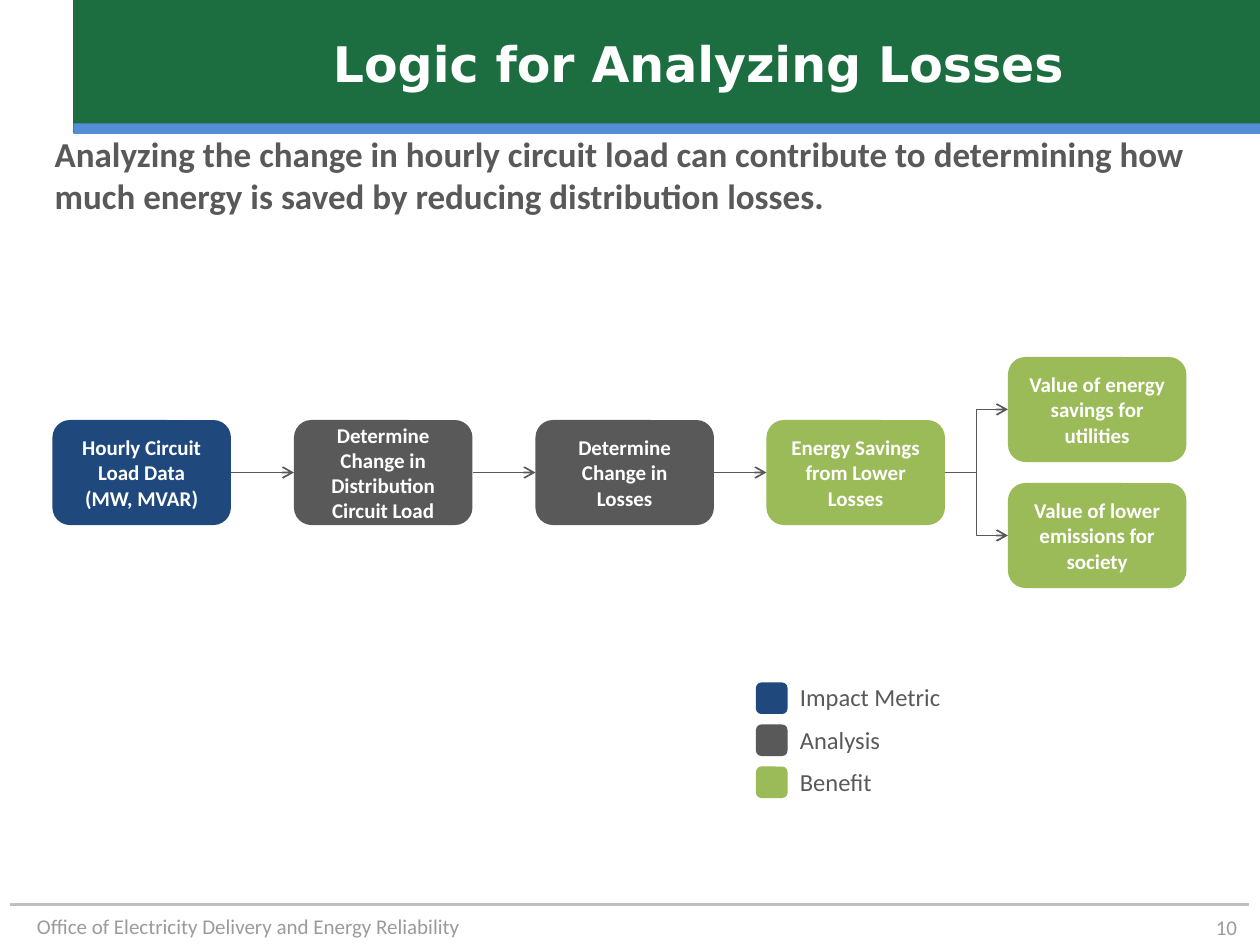
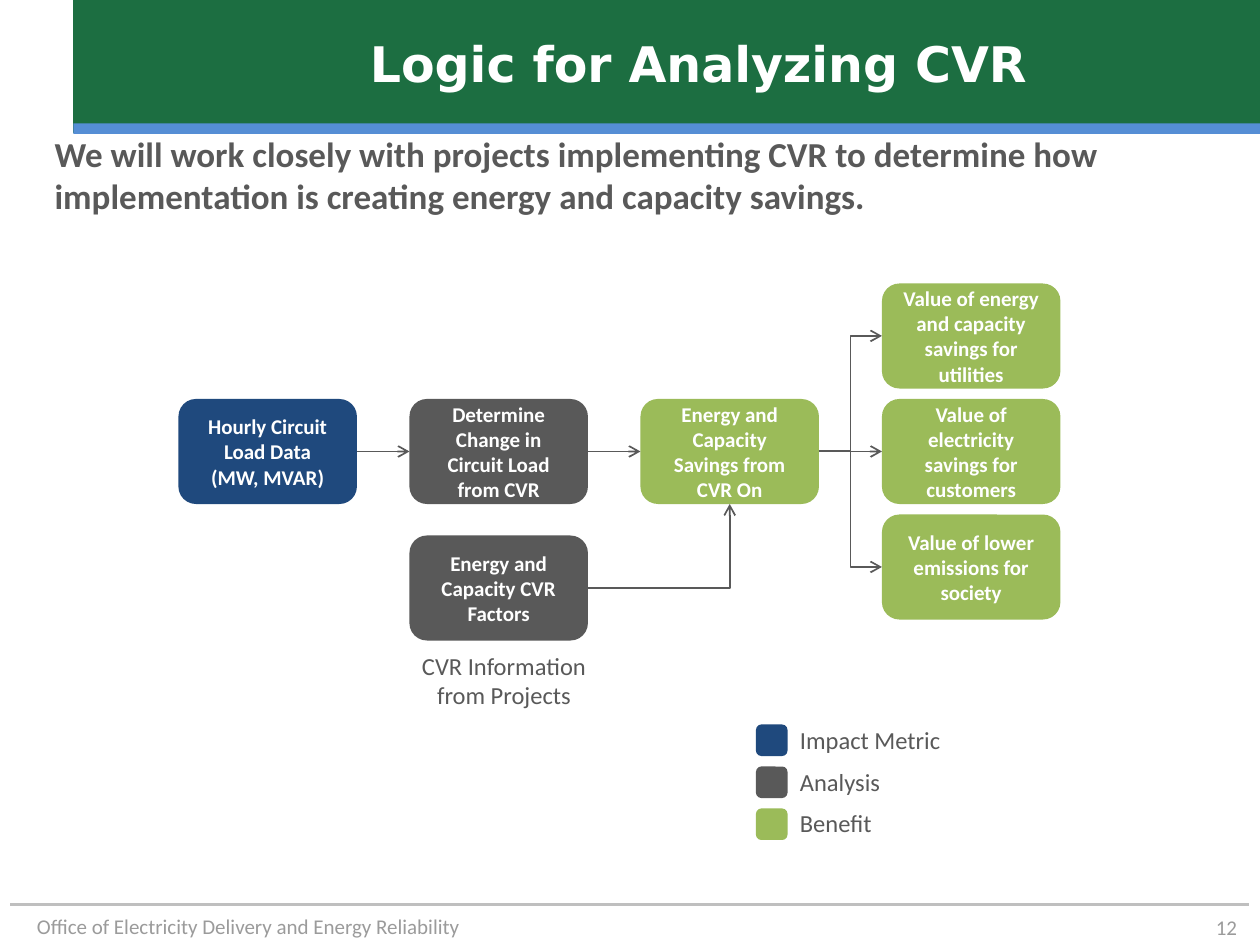
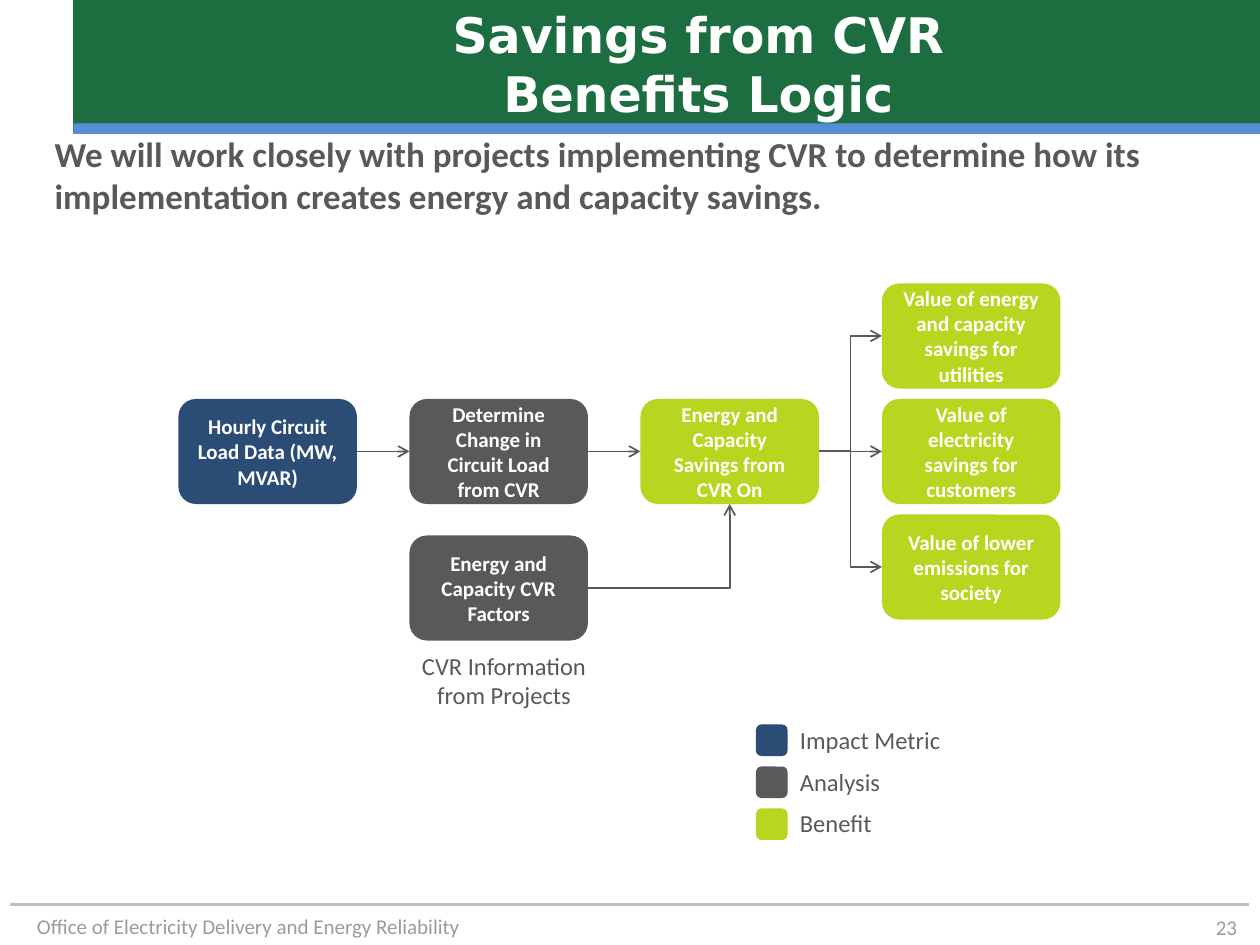
from dataclasses import dataclass

from lxml.etree import SubElement
from pptx import Presentation
from pptx.dml.color import RGBColor
from pptx.enum.shapes import MSO_CONNECTOR, MSO_SHAPE
from pptx.enum.text import MSO_ANCHOR, MSO_AUTO_SIZE, PP_ALIGN
from pptx.oxml.ns import qn
from pptx.util import Inches, Pt

COLS, ROWS = 120, 90
WIDTH, HEIGHT = Inches(10), Inches(7.5)
BOX_W, BOX_H = 17, 10
LEGEND_COL, LEGEND_STEP, SWATCH = 72, 4, 3

COLORS = {
    "band": "1C6E41", "stripe": "558ED5", "rule": "BFBFBF", "footer": "9B9B9B",
    "text": "595959", "white": "FFFFFF",
}
CLASSIC = {"Impact Metric": "1F497D", "Analysis": "595959", "Benefit": "9BBB59"}
VIVID = {"Impact Metric": "2B4C74", "Analysis": "595959", "Benefit": "B8D51F"}

TITLE = {"name": "DejaVu Sans", "size": Pt(28), "bold": True, "color": "white"}
LEAD = {"name": "Calibri", "size": Pt(20), "bold": True, "color": "text"}
BOX = {"name": "Calibri", "size": Pt(12), "bold": True, "color": "white"}
LABEL = {"name": "Calibri", "size": Pt(14), "bold": False, "color": "text"}
FOOTER = {"name": "Calibri", "size": Pt(12), "bold": False, "color": "footer"}

FLUSH = {"margin_top": 0, "margin_bottom": 0}
PADDED = {"margin_top": Inches(0.1), "margin_bottom": Inches(0.1),
          "vertical_anchor": MSO_ANCHOR.MIDDLE}


@dataclass
class Area:
    col: float
    row: float
    cols: float
    rows: float

    def emu(self) -> tuple:
        return (x(self.col), y(self.row), x(self.cols), y(self.rows))


@dataclass
class Node:
    text: str
    kind: str
    col: float
    row: float

    @property
    def area(self) -> Area:
        return Area(self.col, self.row, BOX_W, BOX_H)


@dataclass
class Link:
    start: str
    end: str
    from_below: bool = False


@dataclass
class Diagram:
    number: int
    title: str
    lead: str
    palette: dict
    nodes: dict
    links: list
    legend_row: float
    caption: str = ""


def x(col: float) -> int:
    return round(WIDTH * col / COLS)


def y(row: float) -> int:
    return round(HEIGHT * row / ROWS)


def rgb(value: str) -> RGBColor:
    return RGBColor.from_string(value)


def write(tf, text: str, fmt: dict, align=PP_ALIGN.LEFT, **frame) -> None:
    frame = {"word_wrap": True, "auto_size": MSO_AUTO_SIZE.NONE, **frame}
    for name, value in frame.items():
        setattr(tf, name, value)
    for i, line in enumerate(text.split("\n")):
        p = tf.add_paragraph() if i else tf.paragraphs[0]
        p.text = line
        p.alignment = align
        p.space_before = Pt(0)
        for r in p.runs:
            for name, value in fmt.items():
                if name == "color":
                    r.font.color.rgb = rgb(COLORS[value])
                else:
                    setattr(r.font, name, value)


def add_text(s, area: Area, text: str, fmt: dict, align=PP_ALIGN.LEFT, **frame):
    sp = s.shapes.add_textbox(*area.emu())
    write(sp.text_frame, text, fmt, align, **frame)
    return sp


def add_block(s, area: Area, color: str, preset=MSO_SHAPE.ROUNDED_RECTANGLE):
    sp = s.shapes.add_shape(preset, *area.emu())
    sp.shadow.inherit = False
    sp.fill.solid()
    sp.fill.fore_color.rgb = rgb(color)
    sp.line.fill.background()
    return sp


def add_line(s, start: tuple, end: tuple, color: str, width: float,
             kind=MSO_CONNECTOR.STRAIGHT):
    cx = s.shapes.add_connector(kind, x(start[0]), y(start[1]), x(end[0]), y(end[1]))
    cx.line.color.rgb = rgb(color)
    cx.line.width = Pt(width)
    SubElement(cx._element.spPr, qn("a:effectLst"))
    return cx


def add_link(s, nodes: dict, link: Link) -> None:
    a, b = nodes[link.start], nodes[link.end]
    start = (a.col + BOX_W, a.row + BOX_H / 2)
    if link.from_below:
        end = (b.col + BOX_W / 2, b.row + BOX_H)
    else:
        end = (b.col, b.row + BOX_H / 2)
    kind = MSO_CONNECTOR.STRAIGHT if start[1] == end[1] else MSO_CONNECTOR.ELBOW
    cx = add_line(s, start, end, COLORS["text"], 1, kind)
    if link.from_below:
        cx._element.spPr.find(qn("a:prstGeom")).set("prst", "bentConnector2")
    SubElement(cx.line._get_or_add_ln(), qn("a:tailEnd"), type="arrow")


def add_legend(s, palette: dict, row: float) -> None:
    for i, (kind, color) in enumerate(palette.items()):
        top = row + i * LEGEND_STEP
        add_block(s, Area(LEGEND_COL, top, SWATCH, SWATCH), color)
        add_text(s, Area(LEGEND_COL + SWATCH, top, 32, SWATCH), kind, LABEL, **FLUSH)


def set_up_layout(layout, s) -> None:
    band = add_block(s, Area(7, 0, 113, 12.6), COLORS["band"], MSO_SHAPE.RECTANGLE)
    band.line.color.rgb = rgb(COLORS["band"])
    band.line.width = Pt(1)
    stripe = add_block(s, Area(7, 11.75, 113, 1), COLORS["stripe"], MSO_SHAPE.RECTANGLE)
    office = add_text(s, Area(0, 86.4, 45, 3.6),
                      "Office of Electricity Delivery and Energy Reliability",
                      FOOTER, PP_ALIGN.RIGHT)
    rule = add_line(s, (1, 86.15), (119, 86.15), COLORS["rule"], 1.75)
    for i, sp in enumerate((band, stripe, office, rule)):
        layout.shapes.element.insert(2 + i, sp._element)
    areas = {0: Area(13, 0, 107, 12), 1: Area(4, 12, 111.6, 8)}
    for ph in layout.placeholders:
        if ph.placeholder_format.idx in areas:
            ph.left, ph.top, ph.width, ph.height = areas[ph.placeholder_format.idx].emu()


def draw(s, d: Diagram) -> None:
    write(s.shapes.title.text_frame, d.title, TITLE, PP_ALIGN.CENTER,
          vertical_anchor=MSO_ANCHOR.MIDDLE)
    tf = s.placeholders[1].text_frame
    pPr = tf.paragraphs[0]._p.get_or_add_pPr()
    pPr.set("marL", "0")
    pPr.set("indent", "0")
    SubElement(pPr, qn("a:buNone"))
    write(tf, d.lead, LEAD)
    add_text(s, Area(89, 86.5, 30, 3.5), str(d.number), FOOTER, PP_ALIGN.RIGHT,
             margin_left=0, vertical_anchor=MSO_ANCHOR.MIDDLE, **FLUSH)
    for node in d.nodes.values():
        sp = add_block(s, node.area, d.palette[node.kind])
        write(sp.text_frame, node.text, BOX, PP_ALIGN.CENTER, **PADDED)
    for link in d.links:
        add_link(s, d.nodes, link)
    add_legend(s, d.palette, d.legend_row)
    if d.caption:
        add_text(s, Area(38, 62, 20, 7), d.caption, LABEL, PP_ALIGN.CENTER, **FLUSH)


def cvr_diagram(number: int, title: str, lead: str, palette: dict, data: str) -> Diagram:
    nodes = {
        "data": Node(data, "Impact Metric", 17, 38),
        "change": Node("Determine Change in Circuit Load from CVR", "Analysis", 39, 38),
        "factors": Node("Energy and Capacity CVR Factors", "Analysis", 39, 51),
        "savings": Node("Energy and Capacity Savings from CVR On", "Benefit", 61, 38),
        "utilities": Node("Value of energy and capacity savings for utilities",
                          "Benefit", 84, 27),
        "customers": Node("Value of electricity savings for customers", "Benefit", 84, 38),
        "society": Node("Value of lower emissions for society", "Benefit", 84, 49),
    }
    links = [Link("data", "change"), Link("change", "savings"),
             Link("factors", "savings", from_below=True)]
    links += [Link("savings", end) for end in ("utilities", "customers", "society")]
    return Diagram(number, title, lead, palette, nodes, links, 69,
                   "CVR Information\nfrom Projects")


LOSSES = Diagram(
    10, "Logic for Analyzing Losses",
    "Analyzing the change in hourly circuit load can contribute to determining how "
    "much energy is saved by reducing distribution losses.",
    CLASSIC,
    {
        "data": Node("Hourly Circuit Load Data\n(MW, MVAR)", "Impact Metric", 5, 40),
        "load": Node("Determine Change in Distribution Circuit Load", "Analysis", 28, 40),
        "losses": Node("Determine Change in Losses", "Analysis", 51, 40),
        "savings": Node("Energy Savings from Lower Losses", "Benefit", 73, 40),
        "utilities": Node("Value of energy savings for utilities", "Benefit", 96, 34),
        "society": Node("Value of lower emissions for society", "Benefit", 96, 46),
    },
    [Link("data", "load"), Link("load", "losses"), Link("losses", "savings"),
     Link("savings", "utilities"), Link("savings", "society")],
    65,
)

DIAGRAMS = [
    LOSSES,
    cvr_diagram(
        12, "Logic for Analyzing CVR",
        "We will work closely with projects implementing CVR to determine how "
        "implementation is creating energy and capacity savings.",
        CLASSIC, "Hourly Circuit Load Data\n(MW, MVAR)"),
    cvr_diagram(
        23, "Savings from CVR\vBenefits Logic",
        "We will work closely with projects implementing CVR to determine how its "
        "implementation creates energy and capacity savings.",
        VIVID, "Hourly Circuit Load Data (MW, MVAR)"),
]


def main() -> None:
    prs = Presentation()
    prs.slide_width, prs.slide_height = WIDTH, HEIGHT
    layout = prs.slide_layouts[1]
    slides = [prs.slides.add_slide(layout) for _ in DIAGRAMS]
    set_up_layout(layout, slides[0])
    for s, d in zip(slides, DIAGRAMS):
        draw(s, d)
    prs.save("out.pptx")


if __name__ == "__main__":
    main()
